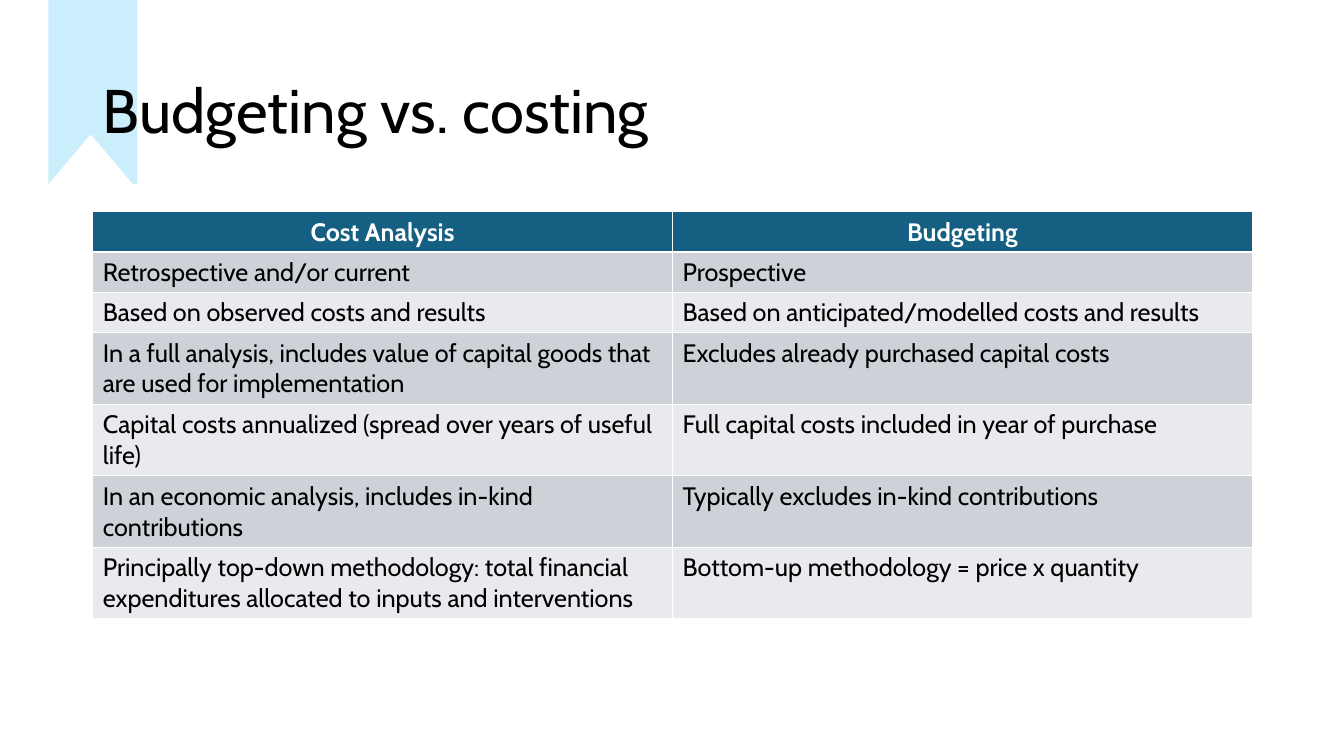
from pptx import Presentation
from pptx.dml.color import RGBColor
from pptx.enum.shapes import MSO_SHAPE
from pptx.enum.text import MSO_ANCHOR, PP_ALIGN
from pptx.util import Inches, Pt

TITLE = "Budgeting vs. costing"
HEADINGS = ("Cost Analysis", "Budgeting")
COMPARISONS = [
    ("Retrospective and/or current", "Prospective"),
    ("Based on observed costs and results",
     "Based on anticipated/modelled costs and results"),
    ("In a full analysis, includes value of capital goods that are used for implementation",
     "Excludes already purchased capital costs"),
    ("Capital costs annualized (spread over years of useful life)",
     "Full capital costs included in year of purchase"),
    ("In an economic analysis, includes in-kind contributions",
     "Typically excludes in-kind contributions"),
    ("Principally top-down methodology: total financial expenditures allocated to inputs and interventions",
     "Bottom-up methodology = price x quantity"),
]
COLORS = {
    "ribbon": "CAEEFB",
    "white": "FFFFFF",
    "black": "000000",
    "heading": "156082",
    "dark_band": "CCD2D8",
    "light_band": "E8EAED",
}
FONT = "Cabin"
LEFT, WIDTH = 0.92, 11.5
ONE_LINE, TWO_LINES = 0.4, 0.71
LINE_CAPACITY = 52


def color(name):
    return RGBColor.from_string(COLORS[name])


def add_ribbon_part(slide, preset, box, fill):
    part = slide.shapes.add_shape(preset, *map(Inches, box))
    part.shadow.inherit = False
    part.fill.solid()
    part.fill.fore_color.rgb = color(fill)
    return part


def add_text(paragraph, text, size, ink, bold=False):
    run = paragraph.add_run()
    run.text = text
    run.font.name = FONT
    run.font.size = Pt(size)
    run.font.bold = bold
    run.font.color.rgb = color(ink)


def add_title(slide):
    title = slide.shapes.add_textbox(Inches(LEFT), Inches(0.4), Inches(WIDTH), Inches(1.45))
    frame = title.text_frame
    frame.word_wrap = True
    frame.vertical_anchor = MSO_ANCHOR.MIDDLE
    frame.paragraphs[0].line_spacing = 0.9
    add_text(frame.paragraphs[0], TITLE, 44, "black")


def add_comparison(slide):
    rows = [HEADINGS, *COMPARISONS]
    heights = [TWO_LINES if len(row[0]) > LINE_CAPACITY else ONE_LINE for row in rows]
    comparison = slide.shapes.add_table(
        len(rows), len(HEADINGS), Inches(LEFT), Inches(2.1), Inches(WIDTH), Inches(sum(heights))
    ).table
    for index, (row, height) in enumerate(zip(rows, heights)):
        heading = index == 0
        band = "heading" if heading else "dark_band" if index % 2 else "light_band"
        comparison.rows[index].height = Inches(height)
        for column, text in enumerate(row):
            cell = comparison.cell(index, column)
            cell.fill.solid()
            cell.fill.fore_color.rgb = color(band)
            paragraph = cell.text_frame.paragraphs[0]
            paragraph.alignment = PP_ALIGN.CENTER if heading else PP_ALIGN.LEFT
            add_text(paragraph, text, 18, "white" if heading else "black", heading)


def main():
    deck = Presentation()
    deck.slide_width, deck.slide_height = Inches(13.33), Inches(7.5)
    slide = deck.slides.add_slide(deck.slide_layouts[6])
    ribbon = add_ribbon_part(slide, MSO_SHAPE.RECTANGLE, (0.48, 0, 0.88, 1.83), "ribbon")
    ribbon.line.fill.background()
    notch = add_ribbon_part(slide, MSO_SHAPE.ISOSCELES_TRIANGLE, (0.4, 1.35, 1, 0.59), "white")
    notch.line.color.rgb = color("white")
    notch.line.width = Pt(1.5)
    add_title(slide)
    add_comparison(slide)
    deck.save("out.pptx")


if __name__ == "__main__":
    main()
